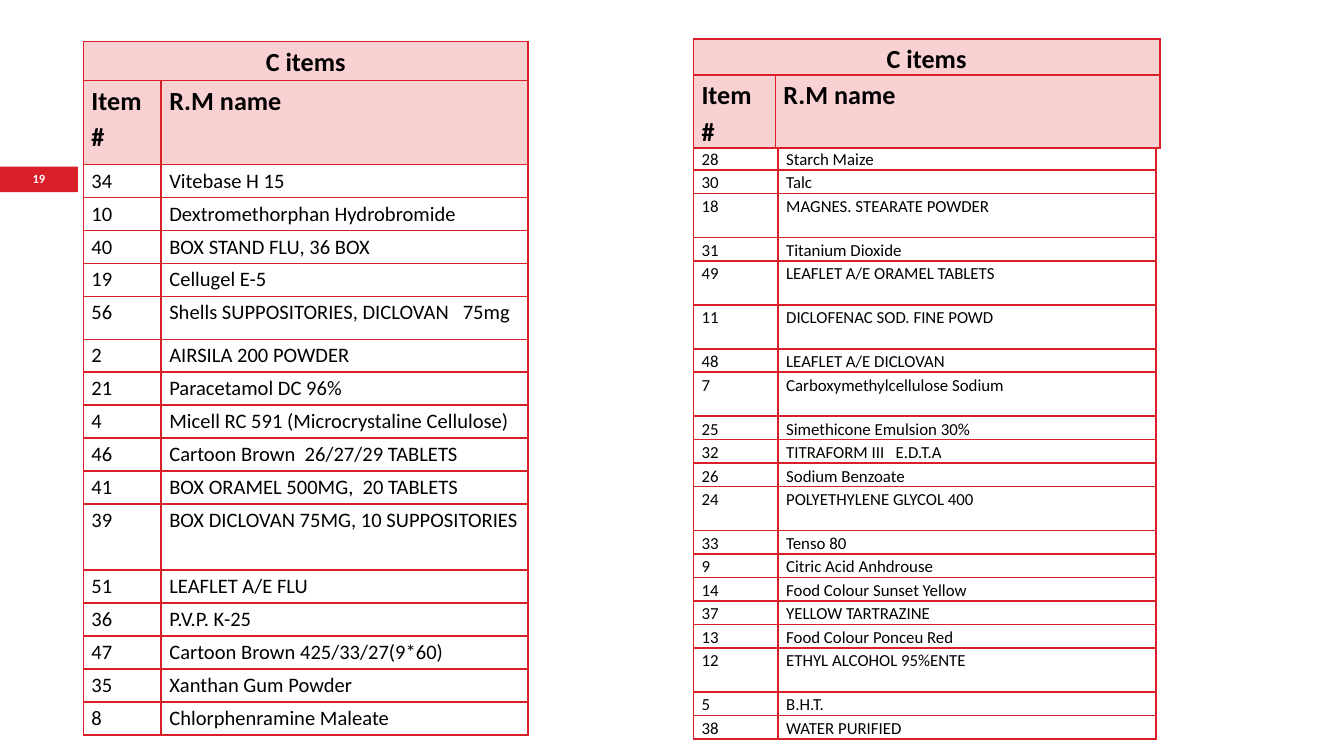
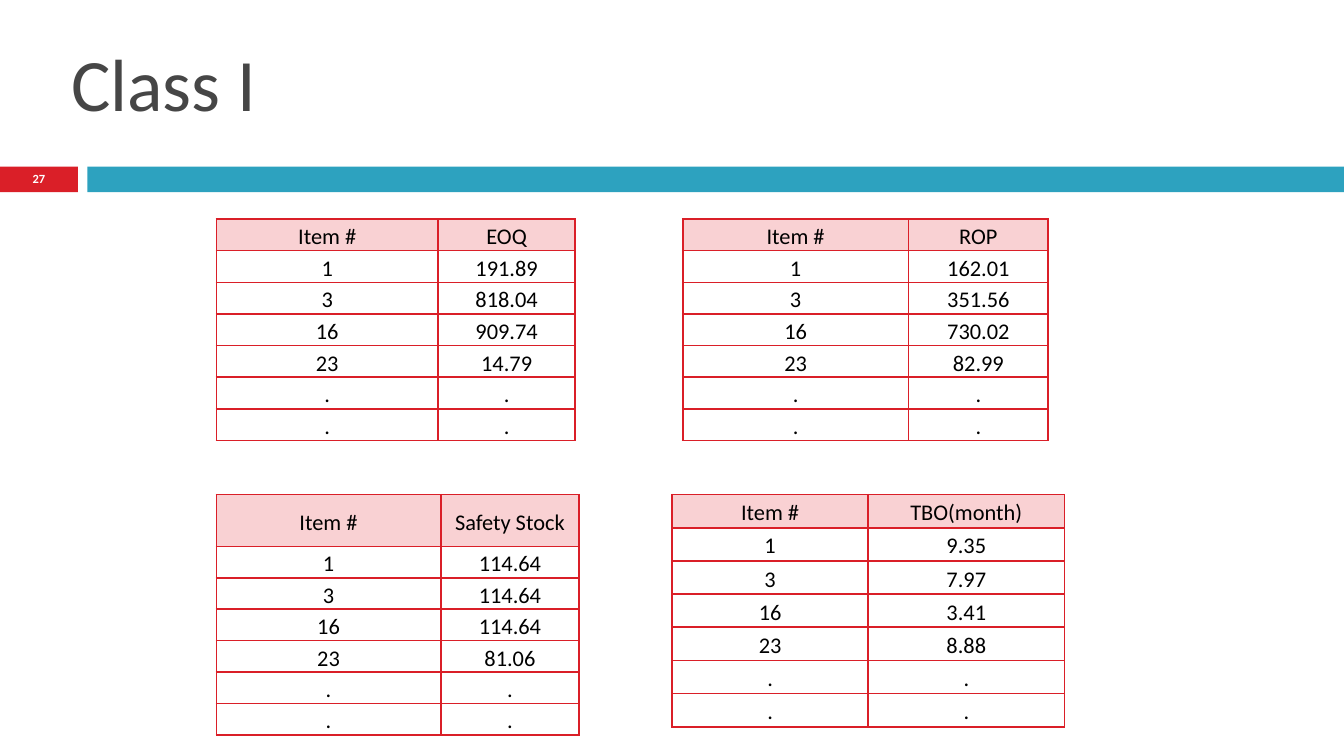
from dataclasses import dataclass

from lxml.etree import SubElement
from pptx import Presentation
from pptx.dml.color import RGBColor
from pptx.enum.shapes import MSO_SHAPE
from pptx.enum.text import MSO_ANCHOR as Anchor, PP_ALIGN as Align
from pptx.oxml.ns import qn
from pptx.util import Inches, Pt


@dataclass(frozen=True)
class Theme:
    font: str = "Calibri"
    red: str = "DA1F28"
    teal: str = "2DA2BF"
    pink: str = "F9D1D3"
    white: str = "FFFFFF"
    black: str = "000000"
    grey: str = "464646"
    title: float = 39.6
    heading: float = 14
    figure: float = 12
    item: float = 11
    small_item: float = 9
    page: float = 6.7
    border: float = 1
    leading: float = 1.15


THEME = Theme()

C_HEADINGS = [("C items", ""), ("Item #", "R.M name")]
C_ITEMS = [
    ("34", "Vitebase H 15"),
    ("10", "Dextromethorphan Hydrobromide"),
    ("40", "BOX STAND FLU, 36 BOX"),
    ("19", "Cellugel E-5"),
    ("56", "Shells SUPPOSITORIES, DICLOVAN   75mg"),
    ("2", "AIRSILA 200 POWDER"),
    ("21", "Paracetamol DC 96%"),
    ("4", "Micell RC 591 (Microcrystaline Cellulose)"),
    ("46", "Cartoon Brown  26/27/29 TABLETS"),
    ("41", "BOX ORAMEL 500MG,  20 TABLETS"),
    ("39", "BOX DICLOVAN 75MG, 10 SUPPOSITORIES"),
    ("51", "LEAFLET A/E FLU"),
    ("36", "P.V.P. K-25"),
    ("47", "Cartoon Brown 425/33/27(9*60)"),
    ("35", "Xanthan Gum Powder"),
    ("8", "Chlorphenramine Maleate"),
]
MORE_C_ITEMS = [
    ("28", "Starch Maize"),
    ("30", "Talc"),
    ("18", "MAGNES. STEARATE POWDER"),
    ("31", "Titanium Dioxide"),
    ("49", "LEAFLET A/E ORAMEL TABLETS"),
    ("11", "DICLOFENAC SOD. FINE POWD"),
    ("48", "LEAFLET A/E DICLOVAN"),
    ("7", "Carboxymethylcellulose Sodium"),
    ("25", "Simethicone Emulsion 30%"),
    ("32", "TITRAFORM III   E.D.T.A"),
    ("26", "Sodium Benzoate"),
    ("24", "POLYETHYLENE GLYCOL 400"),
    ("33", "Tenso 80"),
    ("9", "Citric Acid Anhdrouse"),
    ("14", "Food Colour Sunset Yellow"),
    ("37", "YELLOW TARTRAZINE"),
    ("13", "Food Colour Ponceu Red"),
    ("12", "ETHYL ALCOHOL 95%ENTE"),
    ("5", "B.H.T."),
    ("38", "WATER PURIFIED"),
]
C_TABLES = [
    dict(at=(0.62, 0.31), cols=(0.58, 2.73), height=5.16, headings=C_HEADINGS,
         rows=C_ITEMS, size=THEME.item,
         tall={"C items": 1.18, "Item #": 2.55, "56": 1.3, "39": 2}),
    dict(at=(5.16, 1.09), cols=(0.63, 2.81), height=4.41, headings=[],
         rows=MORE_C_ITEMS, size=THEME.small_item,
         tall=dict.fromkeys(("18", "49", "11", "7", "24", "12"), 1.87)),
    dict(at=(5.16, 0.29), cols=(0.61, 2.86), height=0.81, headings=C_HEADINGS,
         rows=[], size=THEME.item, tall={"Item #": 2}),
]

CLASS_I_ITEMS = ("1", "3", "16", "23", ".", ".")
CLASS_I_TABLES = [
    dict(measure="EOQ", values=("191.89", "818.04", "909.74", "14.79", ".", "."),
         at=(1.61, 1.63), cols=(1.65, 1.02), height=1.65, tall={}),
    dict(measure="Safety Stock",
         values=("114.64", "114.64", "114.64", "81.06", ".", "."),
         at=(1.61, 3.68), cols=(1.67, 1.03), height=1.79, tall={"Item #": 1.65}),
    dict(measure="ROP", values=("162.01", "351.56", "730.02", "82.99", ".", "."),
         at=(5.08, 1.63), cols=(1.68, 1.04), height=1.65, tall={}),
    dict(measure="TBO(month)", values=("9.35", "7.97", "3.41", "8.88", ".", "."),
         at=(5, 3.68), cols=(1.46, 1.46), height=1.73, tall={}),
]


def rgb(color):
    return RGBColor.from_string(color)


def write(frame, text, size, color=THEME.black, bold=False, **layout):
    paragraph = frame.paragraphs[0]
    for key, value in layout.items():
        setattr(paragraph, key, value)
    run = paragraph.add_run()
    run.text = text
    for key, value in dict(name=THEME.font, size=Pt(size), bold=bold).items():
        setattr(run.font, key, value)
    run.font.color.rgb = rgb(color)


def add_bar(slide, box, color):
    bar = slide.shapes.add_shape(MSO_SHAPE.RECTANGLE, *map(Inches, box))
    bar.shadow.inherit = False
    bar.fill.solid()
    bar.fill.fore_color.rgb = rgb(color)
    bar.line.fill.background()


def add_page_number(slide, number):
    add_bar(slide, (0, 1.24, 0.58, 0.19), THEME.red)
    page = slide.shapes.add_textbox(*map(Inches, (0, 1.23, 0.58, 0.2))).text_frame
    for key, value in dict(word_wrap=True, vertical_anchor=Anchor.MIDDLE,
                           margin_left=0, margin_right=0,
                           margin_top=0, margin_bottom=0).items():
        setattr(page, key, value)
    write(page, number, THEME.page, THEME.white, True, alignment=Align.CENTER)


def style_cell(cell, inset, anchor, heading):
    for key, value in dict(margin_left=Inches(inset), margin_right=Inches(inset),
                           margin_top=0, margin_bottom=0,
                           vertical_anchor=anchor).items():
        setattr(cell, key, value)
    properties = cell._tc.get_or_add_tcPr()
    for side in ("a:lnL", "a:lnR", "a:lnT", "a:lnB"):
        edge = SubElement(properties, qn(side), w=str(Pt(THEME.border)))
        paint = SubElement(edge, qn("a:solidFill"))
        SubElement(paint, qn("a:srgbClr"), val=THEME.red)
    if heading:
        cell.fill.solid()
        cell.fill.fore_color.rgb = rgb(THEME.pink)
    else:
        cell.fill.background()


def add_grid(slide, rows, at, cols, height, tall):
    grid = slide.shapes.add_table(
        len(rows), len(cols), *map(Inches, (*at, sum(cols), height))).table
    grid.first_row = grid.horz_banding = False
    for column, width in zip(grid.columns, cols):
        column.width = Inches(width)
    shares = [tall.get(first, 1) for first, _ in rows]
    for row, share in zip(grid.rows, shares):
        row.height = Inches(height * share / sum(shares))
    return grid


def add_c_table(slide, headings, rows, size, **place):
    lines = headings + rows
    grid = add_grid(slide, lines, **place)
    for r, line in enumerate(lines):
        heading = r < len(headings)
        banner = line[1] == ""
        for c, text in enumerate(line):
            cell = grid.cell(r, c)
            style_cell(cell, 0.06, Anchor.TOP, heading)
            if text:
                write(cell.text_frame, text, THEME.heading if heading else size,
                      bold=heading, line_spacing=THEME.leading,
                      alignment=Align.CENTER if banner else Align.LEFT)
        if banner:
            grid.cell(r, 0).merge(grid.cell(r, 1))


def add_class_table(slide, measure, values, **place):
    lines = [("Item #", measure), *zip(CLASS_I_ITEMS, values)]
    grid = add_grid(slide, lines, **place)
    for r, line in enumerate(lines):
        for c, text in enumerate(line):
            cell = grid.cell(r, c)
            style_cell(cell, 0.07, Anchor.MIDDLE, r == 0)
            write(cell.text_frame, text, THEME.figure, alignment=Align.CENTER,
                  line_spacing=THEME.leading, space_after=Pt(10 if r and c else 0))


def add_title(slide, text):
    title = slide.shapes.title
    box = dict(left=0.43, top=0.22, width=8.92, height=0.77)
    for key, value in box.items():
        setattr(title, key, Inches(value))
    title.text_frame.vertical_anchor = Anchor.BOTTOM
    write(title.text_frame, text, THEME.title, THEME.grey, alignment=Align.LEFT)


def main():
    deck = Presentation()
    deck.slide_width = Inches(10)
    deck.slide_height = deck.slide_width * 9 // 16
    title_only, blank = deck.slide_layouts[5], deck.slide_layouts[6]

    c_items = deck.slides.add_slide(blank)
    add_page_number(c_items, "19")
    add_bar(c_items, (0.62, 1.09, 9.38, 0.47), THEME.white)
    for content in C_TABLES:
        add_c_table(c_items, **content)

    class_i = deck.slides.add_slide(title_only)
    add_bar(class_i, (0.65, 1.24, 9.35, 0.19), THEME.teal)
    add_title(class_i, "Class I")
    add_page_number(class_i, "27")
    for content in CLASS_I_TABLES:
        add_class_table(class_i, **content)

    deck.save("out.pptx")


if __name__ == "__main__":
    main()
